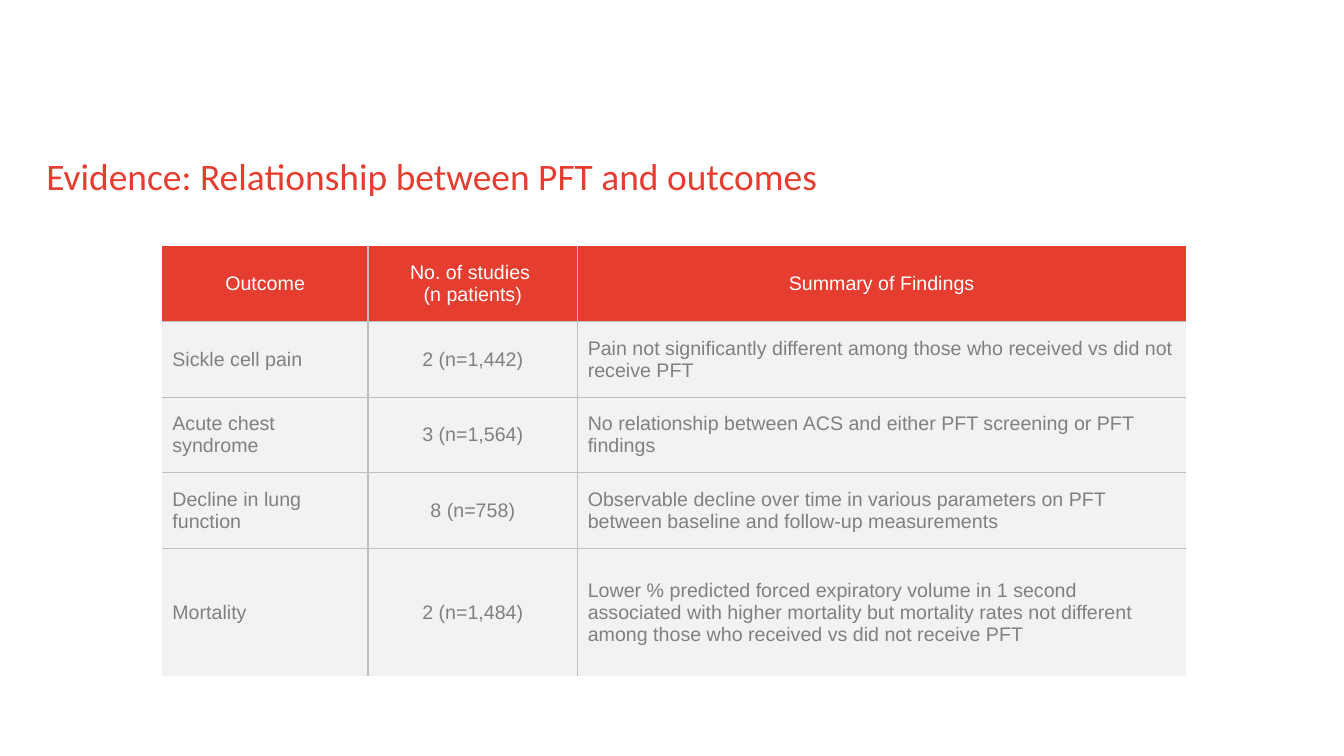
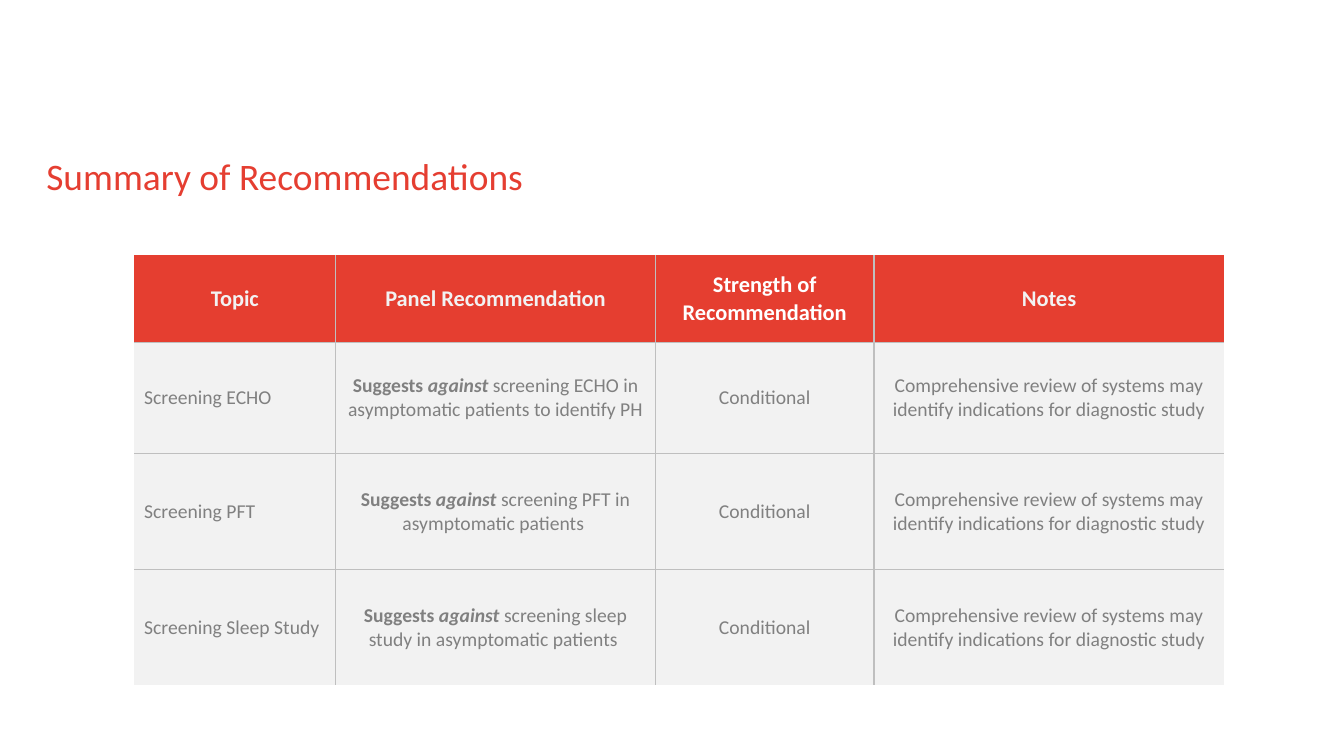
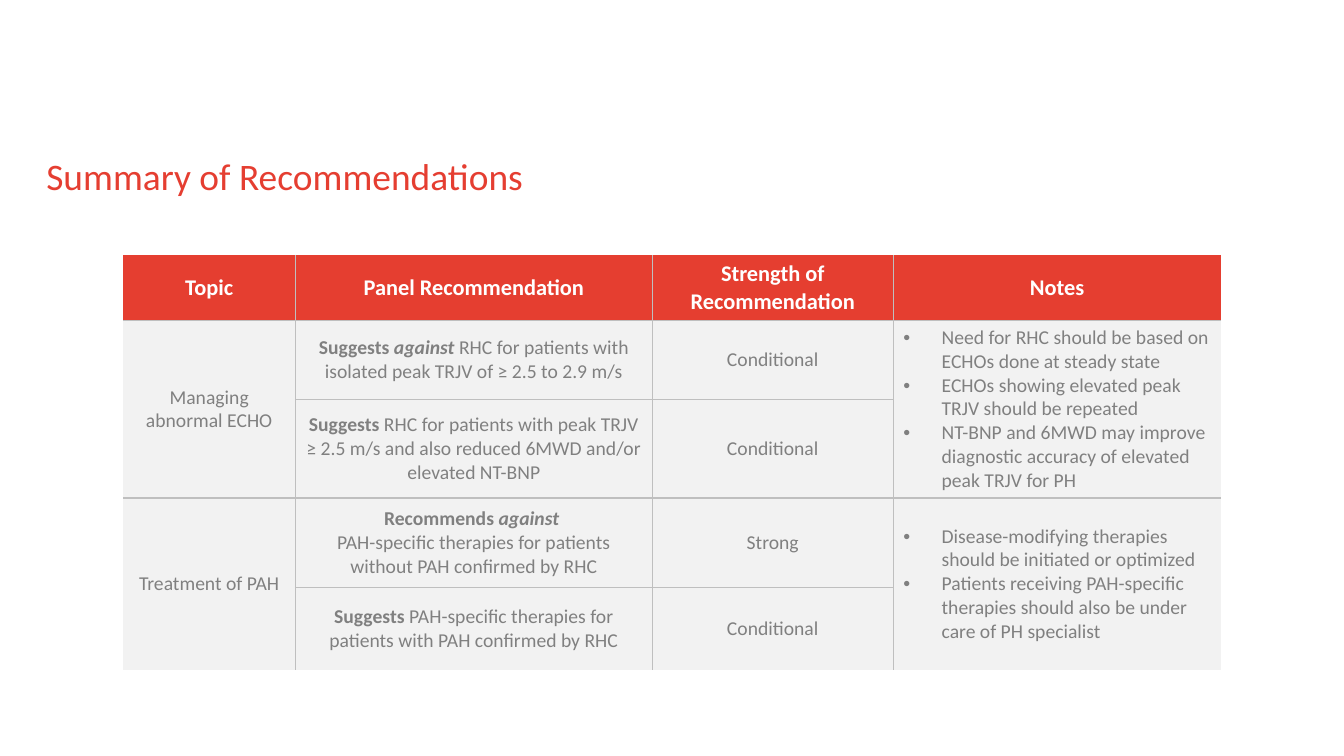
import copy

import pptx
import pptx.dml.color
import pptx.enum.text
import pptx.oxml
import pptx.oxml.ns
import pptx.util
from lxml import etree

RGB = pptx.dml.color.RGBColor
RED = RGB(0xE5, 0x3E, 0x30)
TITLE_RED = RGB(0xE5, 0x3E, 0x31)
WHITE = RGB(0xFF, 0xFF, 0xFF)
PALE = RGB(0xF2, 0xF2, 0xF2)
GRAY = RGB(0x80, 0x80, 0x80)
RULE = RGB(0xBF, 0xBF, 0xBF)
ALIGN = {"l": pptx.enum.text.PP_ALIGN.LEFT, "c": pptx.enum.text.PP_ALIGN.CENTER}
qn = pptx.oxml.ns.qn


def px(n):
    return pptx.util.Emu(n * 9144)


class Deck:
    """Holds the shared style and the current slide."""

    def __init__(self):
        self.prs = pptx.Presentation()
        self.prs.slide_width, self.prs.slide_height = px(1333), px(750)
        self.s = None

    def slide(self, title):
        self.s = self.prs.slides.add_slide(self.prs.slide_layouts[6])
        tf = self.s.shapes.add_textbox(px(46), px(147), px(1200), px(78)).text_frame
        tf.word_wrap = True
        tf.margin_left = 0
        tf.text = title
        self.style(tf.paragraphs[0].runs[0], "Calibri", 26.7, TITLE_RED)

    def style(self, r, font, size, color, bold=False, italic=False):
        r.font.name = font
        r.font.size = pptx.util.Pt(size)
        r.font.color.rgb = color
        r.font.bold, r.font.italic = bold, italic

    def paragraph(self, p, content, align, font, size, color, bold=False):
        p.alignment = ALIGN[align]
        if isinstance(content, str):
            p.text = content
            marks = [""] * len(p.runs)
        else:
            marks = []
            for text, mark in content:
                if text == "\n":
                    p.add_line_break()
                else:
                    p.add_run().text = text
                    marks.append(mark)
        for r, mark in zip(p.runs, marks):
            self.style(r, font, size, color, bold or "b" in mark, "i" in mark)
        for br in p._p.findall(qn("a:br")):
            br.append(copy.deepcopy(p._p.find(qn("a:r")).find(qn("a:rPr"))))

    def bullets(self, tf, items, **text):
        for i, item in enumerate(items):
            p = tf.add_paragraph() if i else tf.paragraphs[0]
            pPr = p._p.get_or_add_pPr()
            pPr.set("marL", str(px(38)))
            pPr.set("indent", str(-px(38)))
            etree.SubElement(pPr, qn("a:buFont")).set("typeface", "Arial")
            etree.SubElement(pPr, qn("a:buChar")).set("char", "•")
            self.paragraph(p, item, "l", **text)

    def borders(self, cell, **sides):
        tcPr = cell._tc.get_or_add_tcPr()
        for side in "LRTB":
            ln = etree.SubElement(tcPr, qn("a:ln" + side))
            if sides[side]:
                ln.set("w", str(pptx.util.Pt(1)))
                fill = etree.SubElement(ln, qn("a:solidFill"))
                etree.SubElement(fill, qn("a:srgbClr")).set("val", str(RULE))
            else:
                ln.set("w", "0")
                etree.SubElement(ln, qn("a:noFill"))

    def table(self, left, top, cols, heights, rows, aligns, font="Calibri",
              head_size=16, head_bold=True, head_colors=(WHITE,) * 4):
        table = self.s.shapes.add_table(len(heights), len(cols), px(left), px(top),
                                        px(sum(cols)), px(sum(heights))).table
        table.horz_banding = False
        for column, width in zip(table.columns, cols):
            column.width = px(width)
        for row, height in zip(table.rows, heights):
            row.height = px(height)
        for i, row in enumerate(rows):
            for j, content in enumerate(row):
                if content is None:
                    table.cell(i - 1, j).merge(table.cell(i, j))
        for i, row in enumerate(rows):
            for j, content in enumerate(row):
                cell = table.cell(i, j)
                span = cell.span_height if cell.is_merge_origin else 1
                self.borders(cell, L=j > 0, R=j < len(cols) - 1,
                             T=i > 0 and content is not None, B=i + span < len(rows))
                cell.fill.solid()
                cell.fill.fore_color.rgb = PALE if i else RED
                cell.vertical_anchor = pptx.enum.text.MSO_ANCHOR.MIDDLE
                tf = cell.text_frame
                if isinstance(content, list):
                    self.bullets(tf, content, font=font, size=14, color=GRAY)
                elif i == 0:
                    self.paragraph(tf.paragraphs[0], content, "c", font, head_size,
                                   head_colors[j], head_bold)
                elif content is not None:
                    self.paragraph(tf.paragraphs[0], content, aligns[j], font, 14, GRAY)


def against(text):
    return ("Suggests ", "b"), ("against", "bi"), (text, "")


def suggests(text):
    return ("Suggests", "b"), (text, "")


def main():
    deck = Deck()
    headings = ("Topic", "Panel Recommendation", "Strength of Recommendation", "Notes")

    deck.slide("Evidence: Relationship between PFT and outcomes")
    deck.table(161, 244, (204, 208, 603), (75, 75, 75, 75, 127), [
        ("Outcome", "No. of studies \n(n patients)", "Summary of Findings"),
        ("Sickle cell pain", "2 (n=1,442)",
         "Pain not significantly different among those who received vs did not receive PFT"),
        ("Acute chest syndrome", "3 (n=1,564)",
         "No relationship between ACS and either PFT screening or PFT findings"),
        ("Decline in lung function", "8 (n=758)",
         "Observable decline over time in various parameters on PFT between baseline "
         "and follow-up measurements"),
        ("Mortality", "2 (n=1,484)",
         "Lower % predicted forced expiratory volume in 1 second associated with higher "
         "mortality but mortality rates not different among those who received vs did not "
         "receive PFT"),
    ], "lcl", font="Arial", head_size=14, head_bold=False)

    deck.slide("Summary of Recommendations")
    review = "Comprehensive review of systems may identify indications for diagnostic study"
    screenings = (
        ("Screening ECHO", " screening ECHO in asymptomatic patients to identify PH"),
        ("Screening PFT", " screening PFT in asymptomatic patients "),
        ("Screening Sleep Study", " screening sleep study in asymptomatic patients "),
    )
    deck.table(133, 253, (200, 317, 217, 347), (87, 110, 115, 115),
               [headings] + [(topic, against(text), "Conditional", review)
                             for topic, text in screenings],
               "lccc", head_colors=(PALE, PALE, WHITE, PALE))

    deck.slide("Summary of Recommendations")
    deck.table(122, 253, (171, 354, 239, 325), (65, 78, 98, 89, 82), [
        headings,
        ("Managing abnormal ECHO",
         against(" RHC for patients with isolated peak TRJV of ≥ 2.5 to 2.9 m/s"),
         "Conditional",
         ["Need for RHC should be based on ECHOs done at steady state",
          "ECHOs showing elevated peak TRJV should be repeated",
          "NT-BNP and 6MWD may improve diagnostic accuracy of elevated peak TRJV for PH"]),
        (None,
         suggests(" RHC for patients with peak TRJV ≥ 2.5 m/s and also reduced 6MWD "
                  "and/or elevated NT-BNP"),
         "Conditional", None),
        ("Treatment of PAH",
         (("Recommends ", "b"), ("against ", "bi"), ("\n", ""),
          ("PAH-specific therapies for patients without PAH confirmed by RHC", "")),
         "Strong",
         ["Disease-modifying therapies should be initiated or optimized",
          "Patients receiving PAH-specific therapies should also be under care of "
          "PH specialist"]),
        (None,
         suggests(" PAH-specific therapies for patients with PAH confirmed by RHC"),
         "Conditional", None),
    ], "cccc")

    deck.prs.save("out.pptx")


if __name__ == "__main__":
    main()
